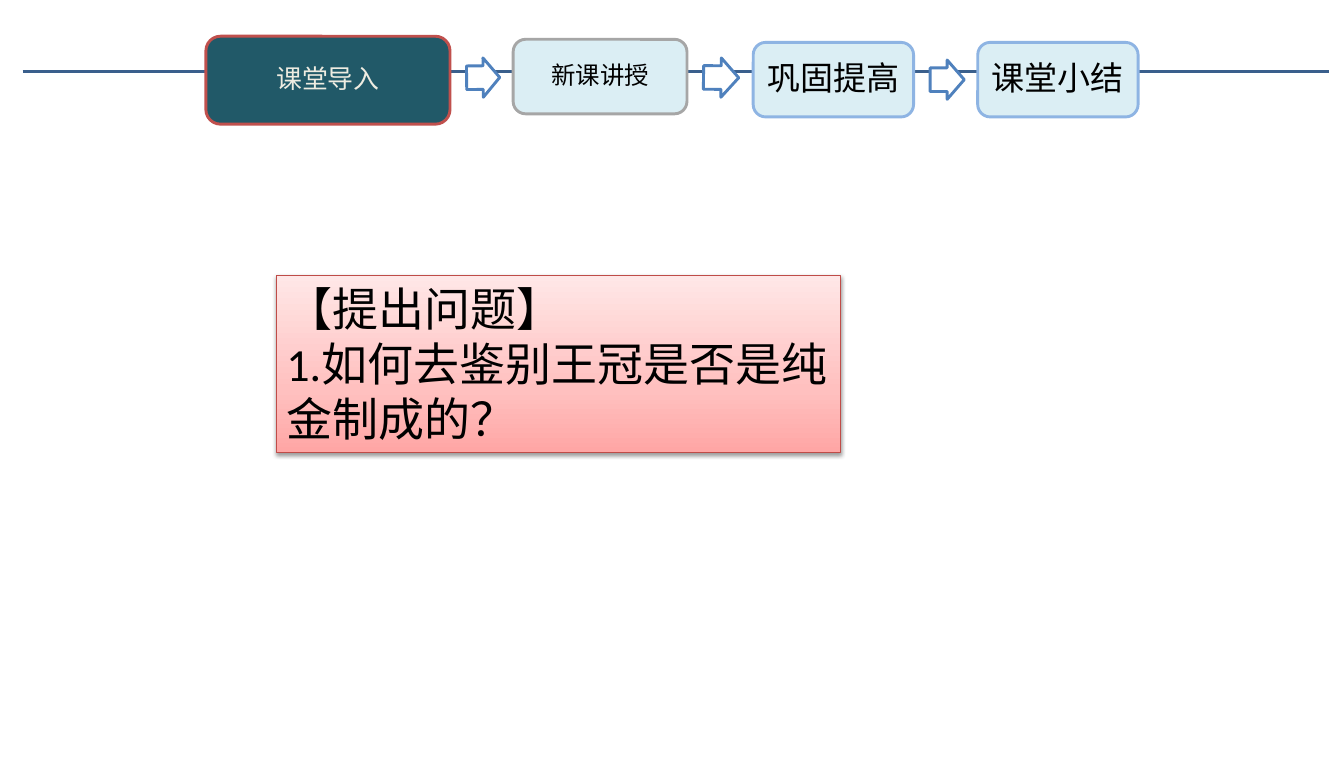
from dataclasses import dataclass

from lxml.etree import SubElement
from pptx import Presentation
from pptx.dml.color import RGBColor
from pptx.enum.shapes import MSO_CONNECTOR, MSO_SHAPE
from pptx.enum.text import MSO_ANCHOR, PP_ALIGN
from pptx.oxml import parse_xml
from pptx.oxml.ns import nsdecls, qn
from pptx.shapes.autoshape import Shape
from pptx.slide import Slide
from pptx.text.text import _Paragraph as Paragraph
from pptx.util import Inches, Pt

FONT = "Calibri"
QUESTION_LINES = ["【提出问题】", "1.如何去鉴别王冠是否是纯金制成的？"]
QUESTION_GRADIENT = [(0, "FFA6A5"), (35, "FFC0BF"), (100, "FFE7E7")]


@dataclass
class Box:
    left: float
    top: float
    width: float
    height: float


@dataclass
class Stage:
    box: Box
    title: str
    size: int
    fill: str = "DBEEF4"
    line: str = "8EB4E3"
    text: str = "000000"


@dataclass
class Arrow:
    box: Box
    rotation: float = 0


STAGES = [
    Stage(Box(1.99, 0.35, 2.36, 0.85), "课堂导入", 18, "215968", "C0504D", "EEECE1"),
    Stage(Box(4.96, 0.38, 1.68, 0.72), "新课讲授", 17, line="A6A6A6"),
    Stage(Box(7.28, 0.41, 1.55, 0.72), "巩固提高", 23),
    Stage(Box(9.45, 0.41, 1.55, 0.72), "课堂小结", 23),
]
ARROWS = [
    Arrow(Box(4.51, 0.56, 0.32, 0.38), 359.4),
    Arrow(Box(6.8, 0.56, 0.34, 0.38), 0.7),
    Arrow(Box(8.99, 0.58, 0.33, 0.38)),
]


def color(value: str) -> RGBColor:
    return RGBColor.from_string(value)


def add_box(slide: Slide, kind: MSO_SHAPE, box: Box, fill: str, line: str, weight: float) -> Shape:
    shape = slide.shapes.add_shape(
        kind, Inches(box.left), Inches(box.top), Inches(box.width), Inches(box.height)
    )
    shape.shadow.inherit = False
    shape.fill.solid()
    shape.fill.fore_color.rgb = color(fill)
    shape.line.color.rgb = color(line)
    shape.line.width = Pt(weight)
    return shape


def add_text(paragraph: Paragraph, text: str, size: int, text_color: str) -> None:
    run = paragraph.add_run()
    run.text = text
    run.font.name = FONT
    run.font.size = Pt(size)
    run.font.color.rgb = color(text_color)


def add_timeline(slide: Slide) -> None:
    timeline = slide.shapes.add_connector(
        MSO_CONNECTOR.STRAIGHT, Inches(0.22), Inches(0.69), Inches(12.85), Inches(0.69)
    )
    timeline.line.color.rgb = color("3A5F8C")
    timeline.line.width = Pt(2)
    SubElement(timeline._element.spPr, qn("a:effectLst"))


def add_stage(slide: Slide, stage: Stage) -> None:
    shape = add_box(slide, MSO_SHAPE.ROUNDED_RECTANGLE, stage.box, stage.fill, stage.line, 2)
    frame = shape.text_frame
    frame.word_wrap = True
    frame.vertical_anchor = MSO_ANCHOR.MIDDLE
    frame.margin_left = frame.margin_right = Inches(0.07)
    frame.margin_top = frame.margin_bottom = Inches(0.07)
    paragraph = frame.paragraphs[0]
    paragraph.alignment = PP_ALIGN.CENTER
    paragraph.line_spacing = 0.9
    add_text(paragraph, stage.title, stage.size, stage.text)


def add_arrow(slide: Slide, arrow: Arrow) -> None:
    shape = add_box(slide, MSO_SHAPE.RIGHT_ARROW, arrow.box, "FFFFFF", "4F81BD", 2)
    shape.adjustments[0] = 0.6
    shape.adjustments[1] = 0.5
    shape.rotation = arrow.rotation


def style_question(shape: Shape) -> None:
    properties = shape._element.spPr
    stops = "".join(
        f'<a:gs pos="{position * 1000}"><a:srgbClr val="{value}"/></a:gs>'
        for position, value in QUESTION_GRADIENT
    )
    gradient = parse_xml(
        f'<a:gradFill {nsdecls("a")} rotWithShape="1"><a:gsLst>{stops}</a:gsLst>'
        '<a:lin ang="16200000" scaled="1"/></a:gradFill>'
    )
    properties.replace(properties.find(qn("a:solidFill")), gradient)
    shadow = parse_xml(
        f'<a:outerShdw {nsdecls("a")} blurRad="{Pt(3.1)}" dist="{Pt(1.6)}" dir="5400000" '
        'rotWithShape="0"><a:srgbClr val="000000"><a:alpha val="38000"/></a:srgbClr>'
        "</a:outerShdw>"
    )
    properties.find(qn("a:effectLst")).append(shadow)


def add_question(slide: Slide) -> None:
    shape = add_box(
        slide, MSO_SHAPE.RECTANGLE, Box(2.67, 2.66, 5.45, 1.71), "FFC0BF", "BF4C48", 0.75
    )
    style_question(shape)
    frame = shape.text_frame
    frame.word_wrap = True
    frame.vertical_anchor = MSO_ANCHOR.TOP
    for index, line in enumerate(QUESTION_LINES):
        paragraph = frame.add_paragraph() if index else frame.paragraphs[0]
        paragraph.alignment = PP_ALIGN.LEFT
        add_text(paragraph, line, 32, "000000")


def main() -> None:
    presentation = Presentation()
    presentation.slide_width = Inches(12.99)
    presentation.slide_height = Inches(7.48)
    slide = presentation.slides.add_slide(presentation.slide_layouts[6])
    add_timeline(slide)
    for stage in STAGES:
        add_stage(slide, stage)
    for arrow in ARROWS:
        add_arrow(slide, arrow)
    add_question(slide)
    presentation.save("out.pptx")


if __name__ == "__main__":
    main()
